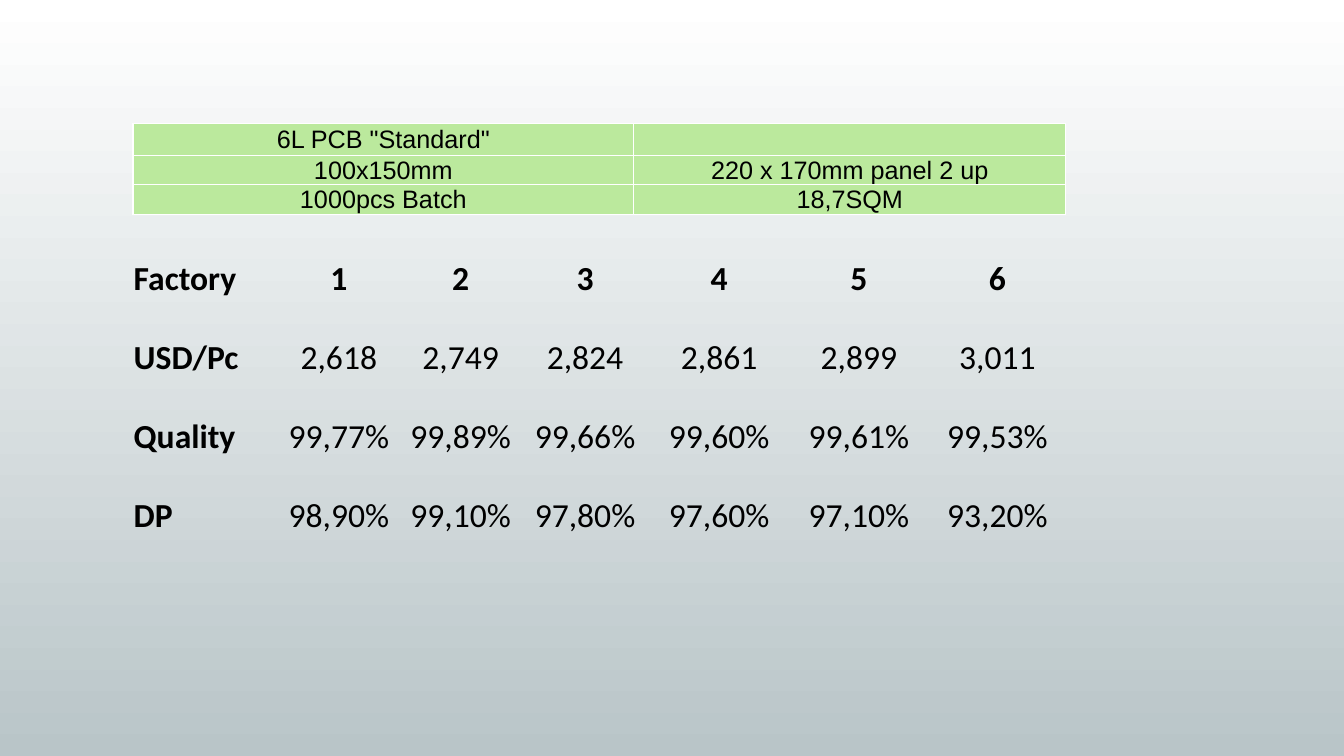
from lxml import etree
from pptx import Presentation
from pptx.dml.color import RGBColor
from pptx.enum import text
from pptx.oxml import ns
from pptx.util import Cm, Pt

BLACK = RGBColor(0x00, 0x00, 0x00)
WHITE = RGBColor(0xFF, 0xFF, 0xFF)
GREY = RGBColor(0xB9, 0xC5, 0xC8)
GREEN = RGBColor(0xBB, 0xE9, 0x9D)
PLAIN_STYLE = "{2D5ABB26-0587-4C30-8999-92F81FD0307C}"  # no style, no grid

BOARD_SPEC = [
    ['6L PCB "Standard"', ""],
    ["100x150mm", "220 x 170mm panel 2 up"],
    ["1000pcs Batch", "18,7SQM"],
]
FACTORY_SCORES = [
    ["Factory", "1", "2", "3", "4", "5", "6"],
    ["USD/Pc", "2,618", "2,749", "2,824", "2,861", "2,899", "3,011"],
    ["Quality", "99,77%", "99,89%", "99,66%", "99,60%", "99,61%", "99,53%"],
    ["DP", "98,90%", "99,10%", "97,80%", "97,60%", "97,10%", "93,20%"],
]


def paint_background(slide):
    fill = slide.background.fill
    fill.gradient()
    fill.gradient_angle = 90
    for stop, color in zip(fill.gradient_stops, (GREY, WHITE)):
        stop.color.rgb = color


def add_plain_table(slide, left, top, widths, heights):
    """Add an unstyled table with the given column widths and row heights in cm."""
    table = slide.shapes.add_table(
        len(heights), len(widths), Cm(left), Cm(top),
        Cm(sum(widths)), Cm(sum(heights))).table
    table.first_row = table.horz_banding = False
    table._tbl.tblPr.find(ns.qn("a:tableStyleId")).text = PLAIN_STYLE
    for column, width in zip(table.columns, widths):
        column.width = Cm(width)
    for row, height in zip(table.rows, heights):
        row.height = Cm(height)
    return table


def write_cell(cell, words, font, size, anchor, align, bold=False):
    cell.margin_left = cell.margin_right = cell.margin_top = Cm(0.02)
    cell.margin_bottom = 0
    cell.vertical_anchor = anchor
    cell.text_frame.text = words
    paragraph = cell.text_frame.paragraphs[0]
    paragraph.alignment = align
    for run in paragraph.runs:
        run.font.name = font
        run.font.size = Pt(size)
        run.font.bold = bold
        run.font.color.rgb = BLACK


def add_cell_borders(cell, color):
    properties = cell._tc.get_or_add_tcPr()
    for side in ("a:lnL", "a:lnR", "a:lnT", "a:lnB"):
        line = etree.SubElement(properties, ns.qn(side), w=str(Pt(1)))
        solid = etree.SubElement(line, ns.qn("a:solidFill"))
        etree.SubElement(solid, ns.qn("a:srgbClr"), val=str(color))


def add_board_spec(slide, left, top):
    table = add_plain_table(slide, left, top, [12.62, 10.89], [0.79, 0.74, 0.74])
    for r, row in enumerate(BOARD_SPEC):
        for c, words in enumerate(row):
            cell = table.cell(r, c)
            write_cell(cell, words, "Arial", 18,
                       text.MSO_ANCHOR.MIDDLE, text.PP_ALIGN.CENTER)
            add_cell_borders(cell, WHITE)
            cell.fill.solid()
            cell.fill.fore_color.rgb = GREEN


def add_factory_scores(slide, left, top):
    widths = [3.63, 3.12, 3.02, 3.25, 3.51, 3.53, 3.45]
    table = add_plain_table(slide, left, top, widths, [1.99] * len(FACTORY_SCORES))
    for r, row in enumerate(FACTORY_SCORES):
        for c, words in enumerate(row):
            align = text.PP_ALIGN.CENTER if c else text.PP_ALIGN.LEFT
            write_cell(table.cell(r, c), words, "Calibri", 24,
                       text.MSO_ANCHOR.BOTTOM, align, bold=r == 0 or c == 0)


def main():
    deck = Presentation()
    deck.slide_width, deck.slide_height = Cm(33.87), Cm(19.05)
    slide = deck.slides.add_slide(deck.slide_layouts[6])
    paint_background(slide)
    # Factory comparison below, board specification above
    add_factory_scores(slide, 3.35, 5.56)
    add_board_spec(slide, 3.35, 3.12)
    deck.save("out.pptx")


if __name__ == "__main__":
    main()
